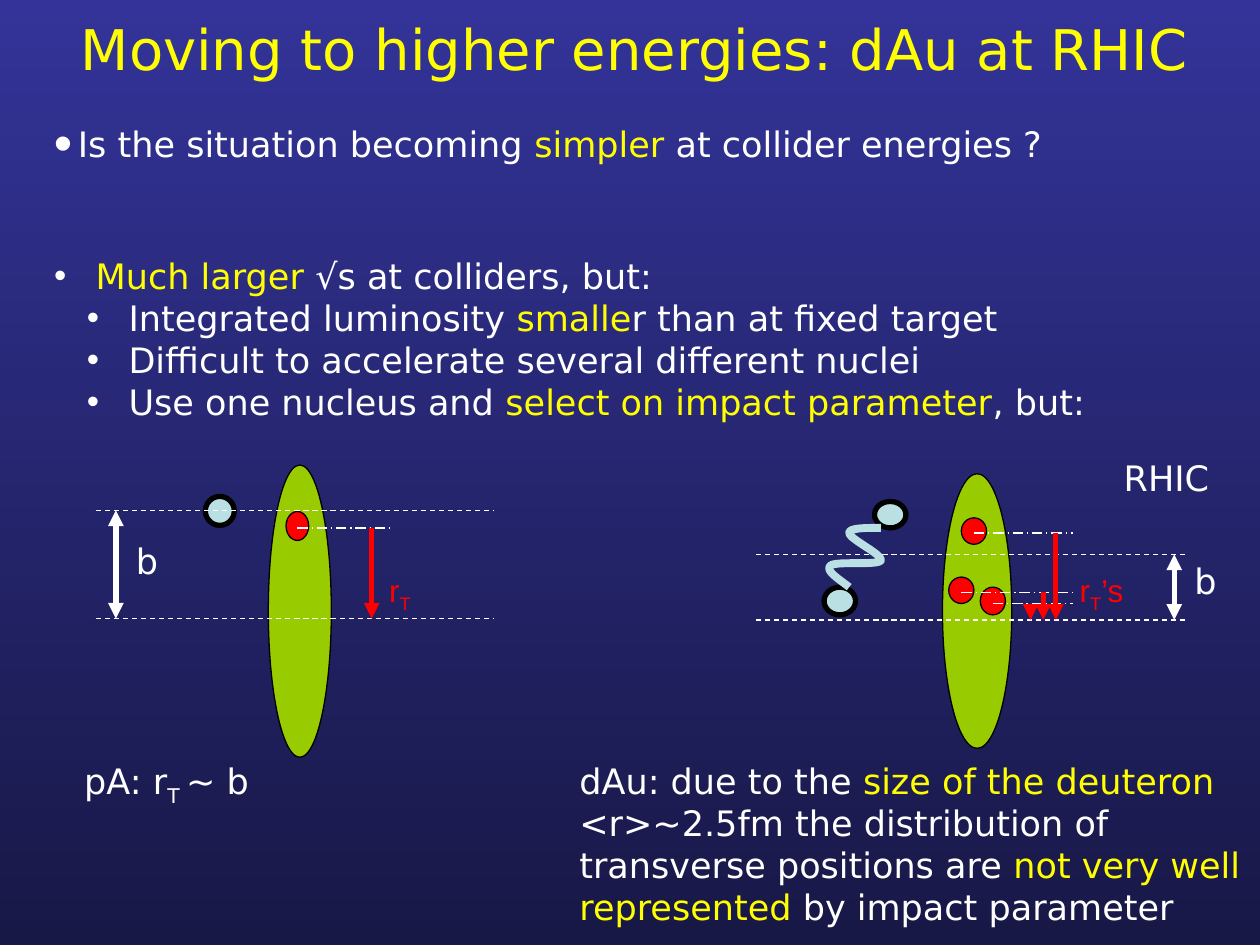
import pptx
import pptx.util
import pptx.dml.color
import pptx.enum.dml
import pptx.enum.shapes
import pptx.enum.text
import pptx.oxml
import pptx.oxml.ns

RGB = pptx.dml.color.RGBColor
TOP = RGB(0x33, 0x33, 0x99)
BOTTOM = RGB(0x18, 0x18, 0x47)
WHITE = RGB(0xFF, 0xFF, 0xFF)
YELLOW = RGB(0xFF, 0xFF, 0x00)
RED = RGB(0xFF, 0x00, 0x00)
GREEN = RGB(0x99, 0xCC, 0x00)
PALE = RGB(0xBB, 0xE0, 0xE3)
BLACK = RGB(0x00, 0x00, 0x00)
DASH = pptx.enum.dml.MSO_LINE.DASH
DASH_DOT = pptx.enum.dml.MSO_LINE.LONG_DASH_DOT
SUB = -25000


class Deck:
    COLS, ROWS = 100, 75
    FONT = "DejaVu Sans"

    def __init__(self):
        self.prs = pptx.Presentation()
        self.prs.slide_width = pptx.util.Inches(10)
        self.prs.slide_height = pptx.util.Inches(7.5)
        self.slide = self.prs.slides.add_slide(self.prs.slide_layouts[1])

    def x(self, col):
        return round(self.prs.slide_width * col / self.COLS)

    def y(self, row):
        return round(self.prs.slide_height * row / self.ROWS)

    def box(self, left, top, width, height):
        return self.x(left), self.y(top), self.x(width), self.y(height)

    def child(self, parent, tag, **attrs):
        el = pptx.oxml.parse_xml(f"<{tag} {pptx.oxml.ns.nsdecls('a')}/>")
        for name, value in attrs.items():
            el.set(name, str(value))
        parent.append(el)

    def background(self, start, end):
        fill = self.slide.background.fill
        fill.gradient()
        fill.gradient_angle = 270
        for stop, colour, pos in zip(fill.gradient_stops, (start, end), (0, 1)):
            stop.color.rgb = colour
            stop.position = pos

    def fill_text(self, sp, paragraphs, size=20, font=FONT, wrap=False):
        tf = sp.text_frame
        tf.word_wrap = wrap
        tf.auto_size = pptx.enum.text.MSO_AUTO_SIZE.NONE
        for i, runs in enumerate(paragraphs):
            p = tf.paragraphs[0] if i == 0 else tf.add_paragraph()
            p.space_before = pptx.util.Pt(0)
            for text, colour, *base in runs:
                r = p.add_run()
                r.text = text
                r.font.size = pptx.util.Pt(size)
                r.font.name = font
                r.font.color.rgb = colour
                if base:
                    r.font._element.set("baseline", str(base[0]))
        return tf

    def place(self, sp, area):
        sp.left, sp.top, sp.width, sp.height = self.box(*area)
        return sp

    def title(self, area, text):
        sp = self.place(self.slide.shapes.title, area)
        tf = self.fill_text(sp, [[(text, YELLOW)]], size=32, wrap=True)
        tf.vertical_anchor = pptx.enum.text.MSO_ANCHOR.MIDDLE

    def bullet(self, p, margin, hanging, size=100):
        pPr = p._p.get_or_add_pPr()
        pPr.set("marL", str(self.x(margin)))
        pPr.set("indent", str(-self.x(hanging)))
        self.child(pPr, "a:buClr")
        self.child(pPr[-1], "a:srgbClr", val=WHITE)
        self.child(pPr, "a:buSzPct", val=size * 1000)
        self.child(pPr, "a:buFont", typeface="Arial")
        self.child(pPr, "a:buChar", char="•")

    def body(self, area, paragraphs):
        sp = self.place(self.slide.placeholders[1], area)
        tf = self.fill_text(sp, paragraphs)
        for i, p in enumerate(tf.paragraphs):
            p.level = min(i, 1)
            self.bullet(p, 5.9 if i else 3.3, 3.3)

    def text(self, area, *paragraphs, **style):
        sp = self.slide.shapes.add_textbox(*self.box(*area))
        return self.fill_text(sp, paragraphs, **style)

    def ellipse(self, area, colour, weight=0.75):
        kind = pptx.enum.shapes.MSO_SHAPE.OVAL
        sp = self.slide.shapes.add_shape(kind, *self.box(*area))
        sp.shadow.inherit = False
        sp.fill.solid()
        sp.fill.fore_color.rgb = colour
        sp.line.color.rgb = BLACK
        sp.line.width = pptx.util.Pt(weight)

    def line(self, x1, y1, x2, y2, colour=WHITE, weight=0.75, dash=None, ends=()):
        kind = pptx.enum.shapes.MSO_CONNECTOR.STRAIGHT
        cn = self.slide.shapes.add_connector(
            kind, self.x(x1), self.y(y1), self.x(x2), self.y(y2))
        cn.line.color.rgb = colour
        cn.line.width = pptx.util.Pt(weight)
        if dash:
            cn.line.dash_style = dash
        for end in ends:
            self.child(cn.line._get_or_add_ln(), f"a:{end}", type="triangle")
        self.child(cn._element.spPr, "a:effectLst")

    def curve(self, start, segments, colour, weight, steps=12):
        points, p0 = [], start
        for p1, p2, p3 in segments:
            for t in (i / steps for i in range(1, steps + 1)):
                u = 1 - t
                points.append(tuple(
                    u**3 * a + 3 * u * u * t * b + 3 * u * t * t * c + t**3 * d
                    for a, b, c, d in zip(p0, p1, p2, p3)))
            p0 = p3
        fb = self.slide.shapes.build_freeform(self.x(start[0]), self.y(start[1]))
        fb.add_line_segments([(self.x(a), self.y(b)) for a, b in points], close=False)
        sp = fb.convert_to_shape()
        sp.shadow.inherit = False
        sp.fill.background()
        sp.line.color.rgb = colour
        sp.line.width = pptx.util.Pt(weight)

    def collision(self, projectiles, nucleus, nucleons, span, rows, b_col, radii, reach):
        for area in projectiles:
            self.ellipse(area, PALE, 3)
        self.ellipse(nucleus, GREEN)
        for area in nucleons:
            self.ellipse(area, RED)
        for row in rows:
            self.line(span[0], row, span[1], row, dash=DASH)
        self.line(b_col, rows[0], b_col, rows[1], weight=3, ends=("headEnd", "tailEnd"))
        for start, row, col in radii:
            self.line(start, row, reach, row, dash=DASH_DOT)
            self.line(col, row, col, rows[1], RED, 3, ends=("tailEnd",))


def main():
    d = Deck()
    d.background(TOP, BOTTOM)
    d.title((3.3, -0.8, 94.2, 9.2), "Moving to higher energies: dAu at RHIC")
    d.body((3.3, 19.7, 85.5, 14.3), [
        [("Much larger", YELLOW), (" √s at colliders, but:", WHITE)],
        [("Integrated luminosity ", WHITE), ("smalle", YELLOW),
         ("r than at fixed target", WHITE)],
        [("Difficult to accelerate several different nuclei", WHITE)],
        [("Use one nucleus and ", WHITE), ("select on impact parameter", YELLOW),
         (", but:", WHITE)],
    ])
    tf = d.text((3.3, 9.2, 83.2, 4.4), [
        ("Is the situation becoming ", WHITE), ("simpler", YELLOW),
        (" at collider energies ?", WHITE)])
    d.bullet(tf.paragraphs[0], 1.9, 1.9, 150)

    d.collision(
        projectiles=[(16.3, 39.4, 2.3, 2.3)],
        nucleus=(21.3, 36.9, 5, 23.2),
        nucleons=[(22.7, 40.6, 1.8, 2.3)],
        span=(7.6, 39.2), rows=(40.5, 49.1), b_col=9.2,
        radii=[(23.6, 41.9, 29.5)], reach=30.9)
    d.collision(
        projectiles=[(65.4, 46.6, 2.5, 2.2), (69.4, 39.8, 2.5, 2.1)],
        nucleus=(74.8, 37.6, 5.5, 21.8),
        nucleons=[(76.3, 41.1, 2, 2.1), (75.3, 45.8, 2, 2.1), (77.8, 46.6, 2, 2.2)],
        span=(60, 94.2), rows=(44, 49.2), b_col=93.2,
        radii=[(78.8, 47.9, 81.8), (76.3, 47, 82.8), (77.3, 42.3, 83.8)], reach=85.2)
    d.curve((69.9, 41.9), [
        ((68.6, 41.9), (67.4, 41.9), (67.4, 42.3)),
        ((67.4, 42.8), (70.1, 44), (69.9, 44.5)),
        ((69.6, 44.9), (66.3, 44.5), (65.9, 44.9)),
        ((65.5, 45.3), (66.5, 45.9), (67.4, 46.6)),
    ], PALE, 4.5)

    radius = [("r", RED), ("T", RED, SUB)]
    d.text((29.9, 44.8, 3.9, 4), radius, size=18, font="Arial")
    d.text((84.7, 44.8, 5.7, 4), radius + [("’s", RED)], size=18, font="Arial")
    for left, top in ((9.8, 42.3), (93.8, 43.9)):
        d.text((left, top, 3.8, 4.3), [("b", WHITE)])
    d.text((88.2, 35.7, 9.1, 4.3), [("RHIC", WHITE)])
    d.text((5.7, 59.8, 15.8, 4.3),
           [("pA: r", WHITE), ("T ", WHITE, SUB), ("~ b", WHITE)])
    d.text((45, 59.8, 58.3, 14.5),
           [("dAu: due to the ", WHITE), ("size of the deuteron", YELLOW),
            (" <r>~2.5fm the distribution of", WHITE)],
           [("transverse positions are ", WHITE),
            ("not very well represented", YELLOW), (" by impact parameter", WHITE)],
           wrap=True)
    d.prs.save("out.pptx")


if __name__ == "__main__":
    main()
